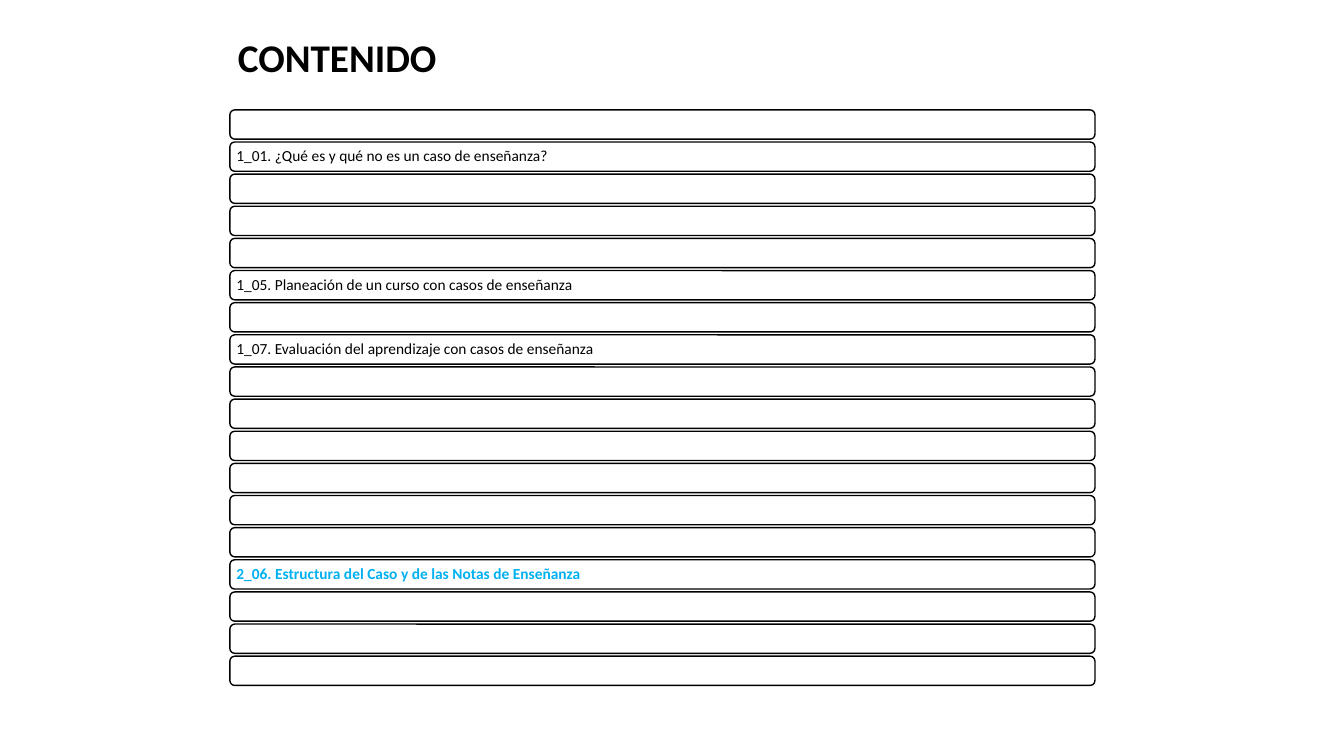
"""Build the CONTENIDO slide: a title above an evenly spaced list of course topics."""
from dataclasses import dataclass
from typing import Any

from pptx import Presentation
from pptx.dml.color import RGBColor
from pptx.enum.shapes import MSO_SHAPE
from pptx.enum.text import MSO_ANCHOR, MSO_AUTO_SIZE, PP_ALIGN
from pptx.util import Inches, Pt

ROUNDED = MSO_SHAPE.ROUNDED_RECTANGLE
MIDDLE = MSO_ANCHOR.MIDDLE
GROW = MSO_AUTO_SIZE.SHAPE_TO_FIT_TEXT
LEFT = PP_ALIGN.LEFT
TITLE_ONLY = 5


@dataclass(frozen=True)
class Theme:
    font: str = "Calibri"
    ink: RGBColor = RGBColor(0x00, 0x00, 0x00)
    paper: RGBColor = RGBColor(0xFF, 0xFF, 0xFF)
    accent: RGBColor = RGBColor(0x00, 0xB0, 0xF0)
    heading: int = 28
    body: int = 11
    outline: int = 1


@dataclass(frozen=True)
class Grid:
    left: float = 2.28
    top: float = 1.09
    width: float = 8.58
    row_height: float = 0.29
    pitch: float = 5.42 / 17
    rows: int = 18

    def row_top(self, row: int) -> float:
        return self.top + row * self.pitch


@dataclass(frozen=True)
class Topic:
    row: int
    label: str = ""
    current: bool = False


THEME = Theme()
GRID = Grid()
LISTED = {
    topic.row: topic
    for topic in (
        Topic(1, "1_01. ¿Qué es y qué no es un caso de enseñanza?"),
        Topic(5, "1_05. Planeación de un curso con casos de enseñanza"),
        Topic(7, "1_07. Evaluación del aprendizaje con casos de enseñanza"),
        Topic(14, "2_06. Estructura del Caso y de las Notas de Enseñanza", True),
    )
}


def apply_format(target: Any, values: dict[str, Any]) -> None:
    """Set each named attribute of the target."""
    for attribute, value in values.items():
        setattr(target, attribute, value)


def write(frame: Any, wording: str, size: int, color: RGBColor, bold: bool) -> None:
    """Put one left-aligned, formatted paragraph in a text frame."""
    paragraph = frame.paragraphs[0]
    paragraph.alignment = LEFT
    run = paragraph.add_run()
    run.text = wording
    apply_format(run.font, {"name": THEME.font, "size": Pt(size), "bold": bold})
    run.font.color.rgb = color


def draw_heading(slide: Any, wording: str) -> None:
    """Place the slide heading in the title placeholder."""
    heading = slide.shapes.title
    apply_format(heading, {
        "left": Inches(2.26), "top": Inches(0.28),
        "width": Inches(2.19), "height": Inches(0.57),
    })
    apply_format(heading.text_frame, {"word_wrap": False, "auto_size": GROW})
    write(heading.text_frame, wording, THEME.heading, THEME.ink, True)


def draw_topic(slide: Any, topic: Topic) -> None:
    """Draw one topic bar on its grid row."""
    bar = slide.shapes.add_shape(
        ROUNDED, Inches(GRID.left), Inches(GRID.row_top(topic.row)),
        Inches(GRID.width), Inches(GRID.row_height),
    )
    bar.shadow.inherit = False
    bar.fill.solid()
    bar.fill.fore_color.rgb = THEME.paper
    bar.line.color.rgb = THEME.ink
    bar.line.width = Pt(THEME.outline)
    if topic.label:
        inset = Inches(0.05)
        apply_format(bar.text_frame, {
            "margin_left": inset, "margin_right": inset,
            "margin_top": inset, "margin_bottom": inset,
            "vertical_anchor": MIDDLE, "word_wrap": True,
        })
        color = THEME.accent if topic.current else THEME.ink
        write(bar.text_frame, topic.label, THEME.body, color, topic.current)
        bar.text_frame.paragraphs[0].line_spacing = 0.9


def main() -> None:
    """Create the presentation and save it."""
    deck = Presentation()
    apply_format(deck, {"slide_width": Inches(13.33), "slide_height": Inches(7.5)})
    slide = deck.slides.add_slide(deck.slide_layouts[TITLE_ONLY])
    draw_heading(slide, "CONTENIDO")
    for row in range(GRID.rows):
        draw_topic(slide, LISTED.get(row, Topic(row)))
    deck.save("out.pptx")


if __name__ == "__main__":
    main()
